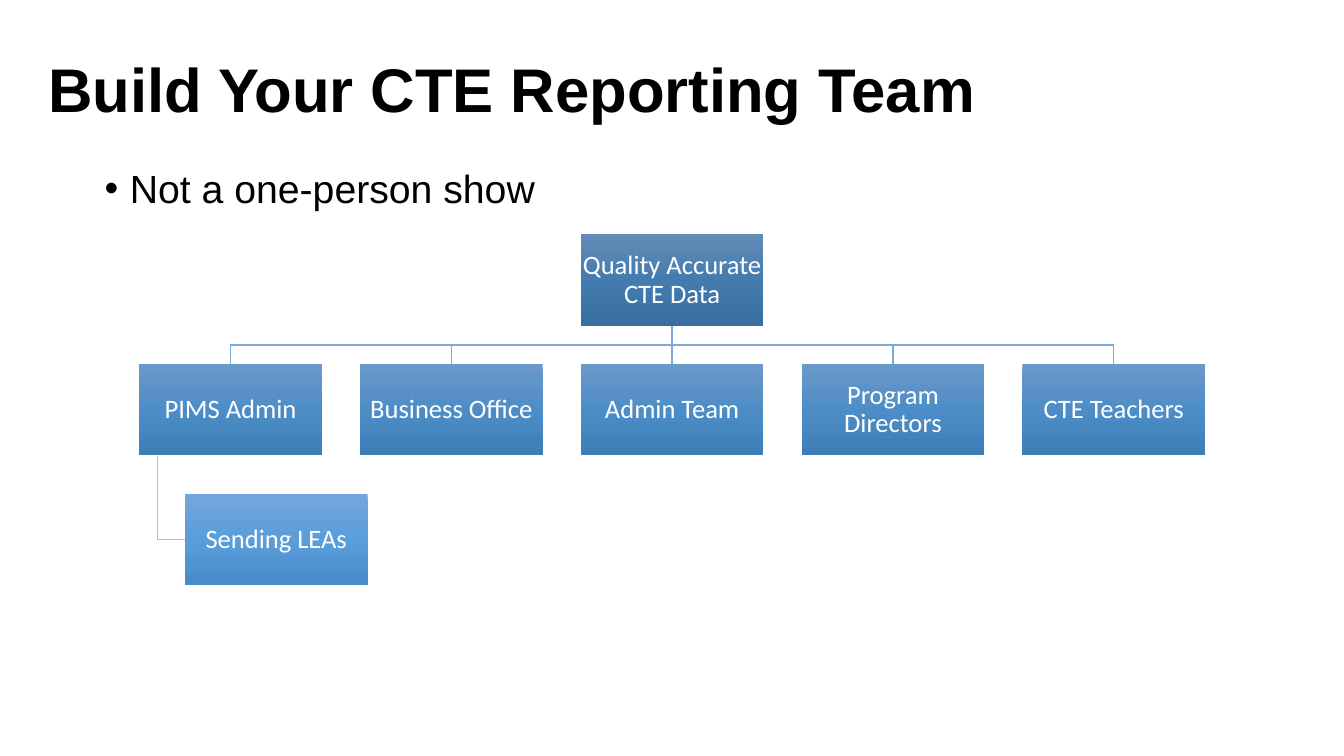
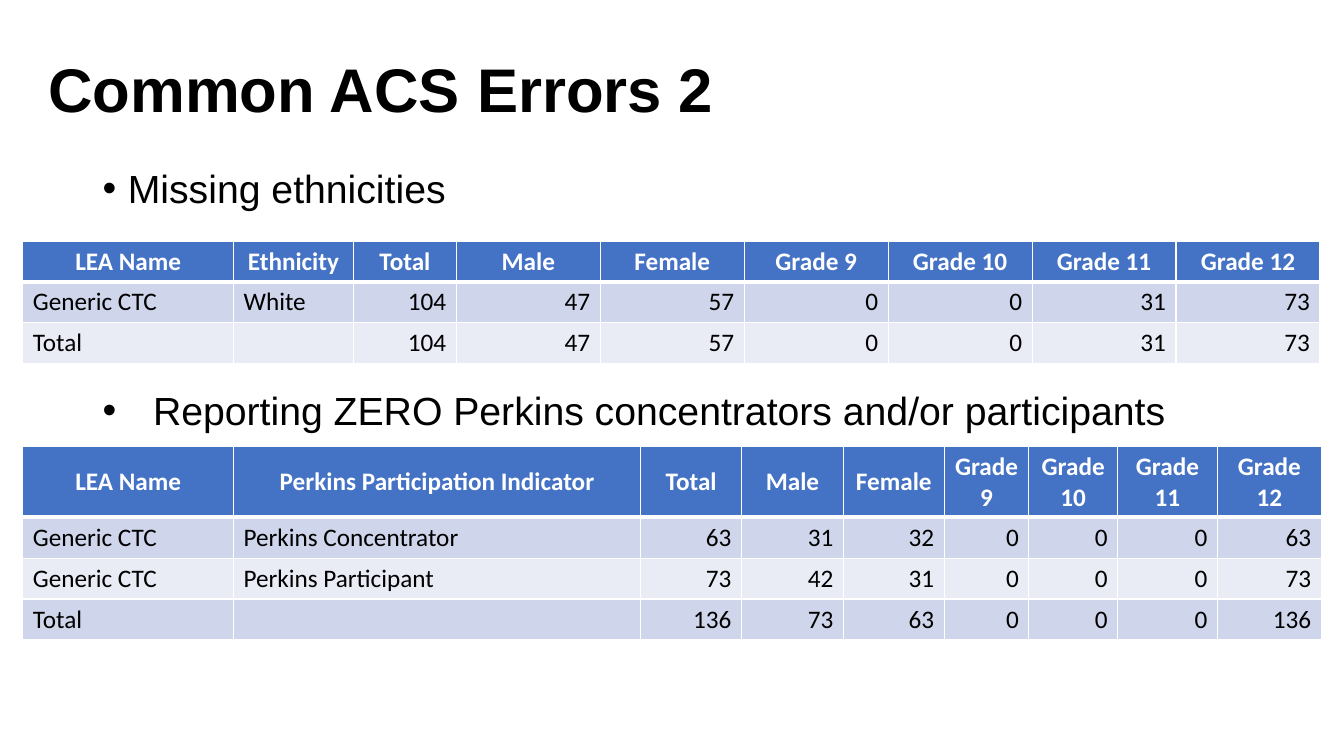
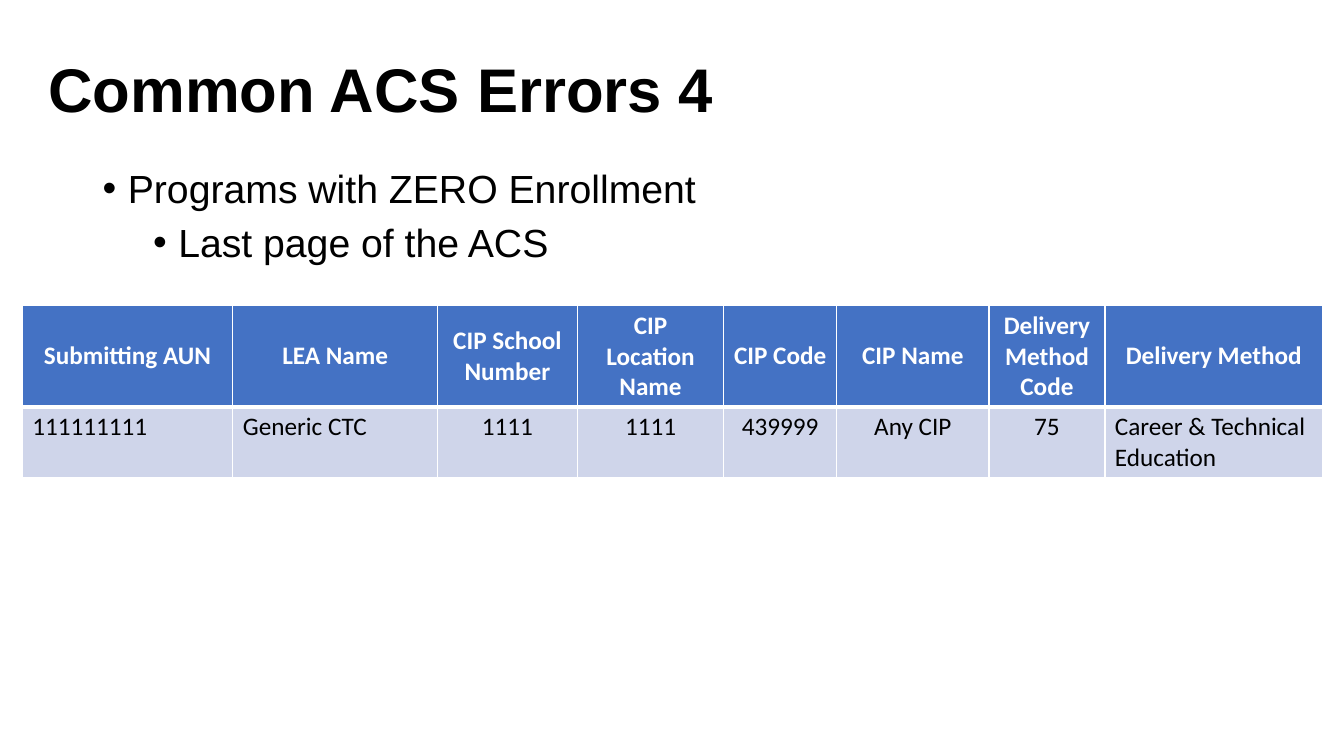
import copy

import lxml.etree
import pptx
import pptx.dml.color
import pptx.enum.shapes
import pptx.enum.text
import pptx.oxml.ns
import pptx.util

RGB = pptx.dml.color.RGBColor
PT = pptx.util.Pt
INCH = pptx.util.Inches
ALIGN = pptx.enum.text.PP_ALIGN
MIDDLE = pptx.enum.text.MSO_ANCHOR.MIDDLE
qn = pptx.oxml.ns.qn

BLACK = RGB(0x00, 0x00, 0x00)
WHITE = RGB(0xFF, 0xFF, 0xFF)
HEAD = RGB(0x44, 0x72, 0xC4)
BANDS = (RGB(0xCF, 0xD5, 0xEA), RGB(0xE9, 0xEB, 0xF5))
LINK = RGB(0x7A, 0xA9, 0xDA)
PALE = RGB(0xA5, 0xC0, 0xE3)
DARK = (RGB(0x63, 0x8B, 0xB6), RGB(0x44, 0x7C, 0xAF), RGB(0x38, 0x6F, 0xA0))
MID = (RGB(0x6B, 0x99, 0xC9), RGB(0x4D, 0x8D, 0xC7), RGB(0x3E, 0x7E, 0xB7))
LIGHT = (RGB(0x74, 0xA7, 0xDB), RGB(0x59, 0x9D, 0xDB), RGB(0x48, 0x8B, 0xCA))
SIDES = {"l": ALIGN.LEFT, "c": ALIGN.CENTER, "r": ALIGN.RIGHT}


class Deck:
    """Style and current slide; lengths are percent of the slide's size."""

    def __init__(self):
        self.show = pptx.Presentation()
        self.show.slide_width = INCH(13.33)
        self.show.slide_height = INCH(7.5)

    def x(self, share):
        return int(self.show.slide_width * share / 100)

    def y(self, share):
        return int(self.show.slide_height * share / 100)

    def area(self, left, top, width, height):
        return self.x(left), self.y(top), self.x(width), self.y(height)

    def words(self, para, text, size, face, color=BLACK, bold=False):
        run = para.add_run()
        run.text = text
        run.font.size = PT(size)
        run.font.name = face
        run.font.color.rgb = color
        run.font.bold = bold

    def frame(self, *area):
        frame = self.slide.shapes.add_textbox(*self.area(*area)).text_frame
        frame.word_wrap = True
        return frame

    def page(self, title):
        self.slide = self.show.slides.add_slide(self.show.slide_layouts[6])
        frame = self.frame(2.85, 2.53, 86.25, 19.33)
        frame.vertical_anchor = MIDDLE
        para = frame.paragraphs[0]
        para.line_spacing = 0.9
        self.words(para, title, 44, "Arial", bold=True)

    def points(self, lines, left=6.9, top=21.07, width=91.3, height=12, hang=0.25):
        """Draw bullets; each further line sits one level deeper."""
        frame = self.frame(left, top, width, height)
        for level, text in enumerate(lines):
            para = frame.add_paragraph() if level else frame.paragraphs[0]
            if level:
                para.space_before = PT(5)
            props = para._p.get_or_add_pPr()
            props.set("marL", str(INCH(hang + level * 0.5)))
            props.set("indent", str(-INCH(hang)))
            lxml.etree.SubElement(props, qn("a:buFont")).set("typeface", "Arial")
            lxml.etree.SubElement(props, qn("a:buChar")).set("char", "•")
            self.words(para, text, 28, "Arial")

    def box(self, text, shades, *area):
        kind = pptx.enum.shapes.MSO_SHAPE.RECTANGLE
        box = self.slide.shapes.add_shape(kind, *self.area(*area))
        box.shadow.inherit = False
        box.line.fill.background()
        box.fill.gradient()
        box.fill.gradient_angle = 270
        stops = box._element.spPr.find(qn("a:gradFill")).find(qn("a:gsLst"))
        stops.append(copy.deepcopy(stops[-1]))
        for i, (stop, shade) in enumerate(zip(box.fill.gradient_stops, shades)):
            stop.color.rgb = shade
            stop.position = i / 2
        frame = box.text_frame
        frame.word_wrap = True
        frame.vertical_anchor = MIDDLE
        frame.margin_left = frame.margin_right = INCH(0.01)
        frame.margin_top = frame.margin_bottom = INCH(0.01)
        para = frame.paragraphs[0]
        para.alignment = ALIGN.CENTER
        para.line_spacing = 0.9
        self.words(para, text, 19, "Calibri", WHITE)

    def link(self, color, *spots):
        """Join two spots by a straight line, or more by a bent one."""
        spots = [(self.x(h), self.y(v)) for h, v in spots]
        shapes = self.slide.shapes
        if len(spots) == 2:
            kind = pptx.enum.shapes.MSO_CONNECTOR.STRAIGHT
            line = shapes.add_connector(kind, *spots[0], *spots[1])
        else:
            build = shapes.build_freeform(*spots[0])
            build.add_line_segments(spots[1:], close=False)
            line = build.convert_to_shape()
            line.fill.background()
        line.line.color.rgb = color
        line.line.width = PT(1)
        lxml.etree.SubElement(line._element.spPr, qn("a:effectLst"))

    def edge(self, cell, side, width):
        props = cell._tc.get_or_add_tcPr()
        line = lxml.etree.SubElement(props, qn("a:ln" + side))
        line.set("w", str(PT(width)))
        fill = lxml.etree.SubElement(line, qn("a:solidFill"))
        lxml.etree.SubElement(fill, qn("a:srgbClr")).set("val", str(WHITE))

    def table(self, top, cols, rows, sides, cells, left=1.7):
        """Draw a table; sides has one letter of alignment per column."""
        area = self.area(left, top, sum(cols), sum(rows))
        table = self.slide.shapes.add_table(len(rows), len(cols), *area).table
        table.horz_banding = False
        for col, width in zip(table.columns, cols):
            col.width = self.x(width)
        for row, height in zip(table.rows, rows):
            row.height = self.y(height)
        for r, line in enumerate(cells):
            for c, text in enumerate(line):
                cell = table.cell(r, c)
                for side in "LRTB":
                    thick = (r, side) in ((0, "B"), (1, "T"))
                    self.edge(cell, side, 3 if thick else 1)
                cell.fill.solid()
                cell.fill.fore_color.rgb = BANDS[(r - 1) % 2] if r else HEAD
                if r == 0:
                    cell.vertical_anchor = MIDDLE
                para = cell.text_frame.paragraphs[0]
                para.alignment = SIDES[sides[c]] if r else ALIGN.CENTER
                if text:
                    color = BLACK if r else WHITE
                    self.words(para, text, 18, "Calibri", color, r == 0)


def team(deck):
    deck.page("Build Your CTE Reporting Team")
    deck.points(["Not a one-person show"], left=7.05)
    left, top, wide, high = 10.35, 31, 13.6, 12.1
    step, drop = 16.43, 17.15
    staff = ["PIMS Admin", "Business Office", "Admin Team",
             "Program Directors", "CTE Teachers"]
    lefts = [left + i * step for i in range(len(staff))]
    second, third = top + drop, top + 2 * drop
    root = lefts[2] + wide / 2
    bend = (top + high + second) / 2
    for i, edge in enumerate(lefts):
        mid = edge + wide / 2
        turns = [] if i == 2 else [(root, bend), (mid, bend)]
        deck.link(LINK, (root, top + high), *turns, (mid, second))
    stem, child = left + wide / 10, left + wide / 4
    level = third + high / 2
    deck.link(PALE, (stem, second + high), (stem, level), (child, level))
    deck.box("Quality Accurate CTE Data", DARK, lefts[2], top, wide, high)
    for name, edge in zip(staff, lefts):
        deck.box(name, MID, edge, second, wide, high)
    deck.box("Sending LEAs", LIGHT, child, third, wide, high)


def counts(deck):
    deck.page("Common ACS Errors 2")
    deck.points(["Missing ethnicities"])
    grades = ["Grade 9", "Grade 10", "Grade 11", "Grade 12"]
    sides = "ll" + "r" * 7
    deck.table(31.87, [15.68, 8.93, 7.65] + [10.71] * 6, [5.42] * 3, sides, [
        ["LEA Name", "Ethnicity", "Total", "Male", "Female"] + grades,
        ["Generic CTC", "White", "104", "47", "57", "0", "0", "31", "73"],
        ["Total", "", "104", "47", "57", "0", "0", "31", "73"],
    ])
    deck.points(["Reporting ZERO Perkins concentrators and/or participants"],
                top=50.4, width=87.4, hang=0.5)
    cols = [15.68, 30.3, 7.5, 7.58, 7.5, 6.3, 6.6, 7.43, 7.73]
    deck.table(59.07, cols, [9.3] + [5.42] * 3, sides, [
        ["LEA Name", "Perkins Participation Indicator", "Total", "Male",
         "Female"] + grades,
        ["Generic CTC", "Perkins Concentrator", "63", "31", "32",
         "0", "0", "0", "63"],
        ["Generic CTC", "Perkins Participant", "73", "42", "31",
         "0", "0", "0", "73"],
        ["Total", "", "136", "73", "63", "0", "0", "0", "136"],
    ])


def empty(deck):
    deck.page("Common ACS Errors 4")
    deck.points(["Programs with ZERO Enrollment", "Last page of the ACS"],
                height=14)
    cols = [15.68, 15.23, 10.4, 10.9, 8.4, 11.33, 8.63, 16.2]
    deck.table(40.4, cols, [13.4, 9.4], "llcccccl", [
        ["Submitting AUN", "LEA Name", "CIP School Number",
         "CIP Location Name", "CIP Code", "CIP Name",
         "Delivery Method Code", "Delivery Method"],
        ["111111111", "Generic CTC", "1111", "1111", "439999", "Any CIP",
         "75", "Career & Technical Education"],
    ], left=1.65)


def main():
    deck = Deck()
    team(deck)
    counts(deck)
    empty(deck)
    deck.show.save("out.pptx")


if __name__ == "__main__":
    main()
